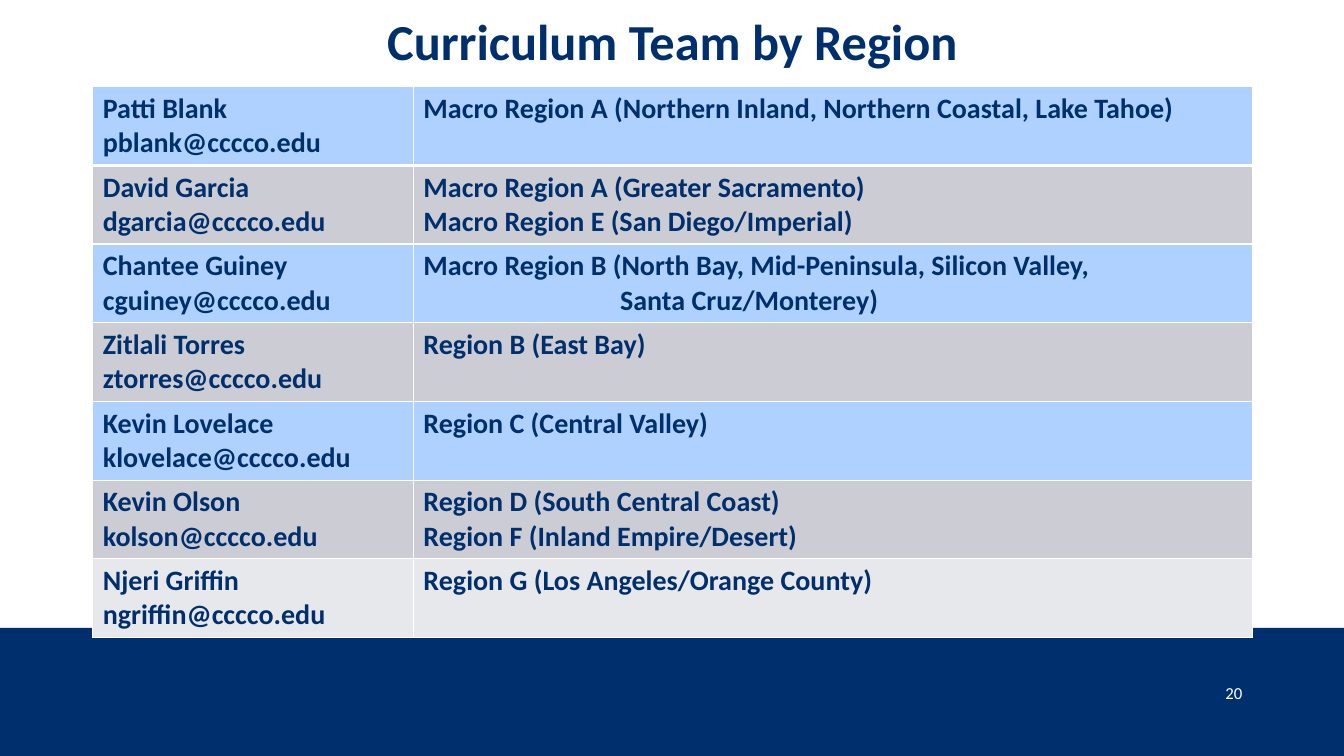
"""Build the curriculum team by region slide."""
from dataclasses import dataclass

from lxml.etree import SubElement
from pptx import Presentation
from pptx.dml.color import RGBColor
from pptx.enum.shapes import MSO_SHAPE as SHAPE
from pptx.enum.text import MSO_ANCHOR as ANCHOR, MSO_AUTO_SIZE as AUTO, PP_ALIGN as ALIGN
from pptx.oxml.ns import qn
from pptx.util import Inches, Pt

NAVY, WHITE, BLUE, GREY, PALE = "002F6D", "FFFFFF", "AFD1FF", "CCCDD4", "E7E8EB"
TITLE_FONT = {"name": "Calibri", "size": Pt(36), "bold": True}
CELL_FONT = {"name": "Calibri", "size": Pt(20), "bold": True}
NUMBER_FONT = {"name": "Calibri", "size": Pt(12), "bold": False}
BORDERS = {"lnL": 1, "lnR": 1, "lnT": 1, "lnB": 3}


@dataclass
class Member:
    name: str
    email: str
    regions: list[str]
    fill: str
    indent: float = 0


TEAM = [
    Member("Patti Blank", "pblank@cccco.edu",
           ["Macro Region A (Northern Inland, Northern Coastal, Lake Tahoe)"], BLUE),
    Member("David Garcia", "dgarcia@cccco.edu",
           ["Macro Region A (Greater Sacramento)", "Macro Region E (San Diego/Imperial)"], GREY),
    Member("Chantee Guiney", "cguiney@cccco.edu",
           ["Macro Region B (North Bay, Mid-Peninsula, Silicon Valley,",
            "Santa Cruz/Monterey)"], BLUE, 1.95),
    Member("Zitlali Torres", "ztorres@cccco.edu", ["Region B (East Bay)"], GREY),
    Member("Kevin Lovelace", "klovelace@cccco.edu", ["Region C (Central Valley)"], BLUE),
    Member("Kevin Olson", "kolson@cccco.edu",
           ["Region D (South Central Coast)", "Region F (Inland Empire/Desert)"], GREY),
    Member("Njeri Griffin", "ngriffin@cccco.edu",
           ["Region G (Los Angeles/Orange County)"], PALE),
]


def rgb(value: str) -> RGBColor:
    return RGBColor.from_string(value)


def write(tf, lines: list[str], font: dict, color: str, align=None, indent: float = 0) -> None:
    for i, line in enumerate(lines):
        p = tf.add_paragraph() if i else tf.paragraphs[0]
        if i and indent:
            p._p.get_or_add_pPr().set("marL", str(Inches(indent)))
        if align is not None:
            p.alignment = align
        r = p.add_run()
        r.text = line
        for key, value in font.items():
            setattr(r.font, key, value)
        r.font.color.rgb = rgb(color)


def add_borders(cell) -> None:
    tc_pr = cell._tc.get_or_add_tcPr()
    for side, width in BORDERS.items():
        ln = SubElement(tc_pr, qn(f"a:{side}"), w=str(Pt(width)))
        SubElement(SubElement(ln, qn("a:solidFill")), qn("a:srgbClr"), val=WHITE)


def add_band(s) -> None:
    sp = s.shapes.add_shape(SHAPE.RECTANGLE, 0, Inches(6.23), Inches(13.33), Inches(1.27))
    sp.shadow.inherit = False
    sp.fill.solid()
    sp.fill.fore_color.rgb = rgb(NAVY)
    sp.line.fill.background()


def add_title(s, text: str) -> None:
    sp = s.shapes.title
    box = {"left": 0.92, "top": 0, "width": 11.5, "height": 0.88}
    for key, value in box.items():
        setattr(sp, key, Inches(value))
    tf = sp.text_frame
    tf.auto_size = AUTO.NONE
    tf.vertical_anchor = ANCHOR.MIDDLE
    write(tf, [text], TITLE_FONT, NAVY, ALIGN.CENTER)
    tf.paragraphs[0].line_spacing = 0.9


def add_team(s, team: list[Member]) -> None:
    frame = s.shapes.add_table(len(team), 2, Inches(0.92), Inches(0.86),
                               Inches(11.5), Inches(5.37))
    table = frame.table
    table.first_row = False
    for column, width in zip(table.columns, (3.18, 8.32)):
        column.width = Inches(width)
    for i, member in enumerate(team):
        for j, lines in enumerate(([member.name, member.email], member.regions)):
            cell = table.cell(i, j)
            if i == 0:
                add_borders(cell)
            cell.fill.solid()
            cell.fill.fore_color.rgb = rgb(member.fill)
            write(cell.text_frame, lines, CELL_FONT, NAVY, indent=member.indent * j)


def add_number(s, text: str) -> None:
    tf = s.shapes.add_textbox(Inches(9.42), Inches(6.67), Inches(3), Inches(0.4)).text_frame
    tf.word_wrap = True
    tf.vertical_anchor = ANCHOR.MIDDLE
    write(tf, [text], NUMBER_FONT, WHITE, ALIGN.RIGHT)


def main() -> None:
    prs = Presentation()
    prs.slide_width, prs.slide_height = Inches(13.33), Inches(7.5)
    s = prs.slides.add_slide(prs.slide_layouts[5])
    add_band(s)
    add_title(s, "Curriculum Team by Region")
    add_team(s, TEAM)
    add_number(s, "20")
    prs.save("out.pptx")


if __name__ == "__main__":
    main()
